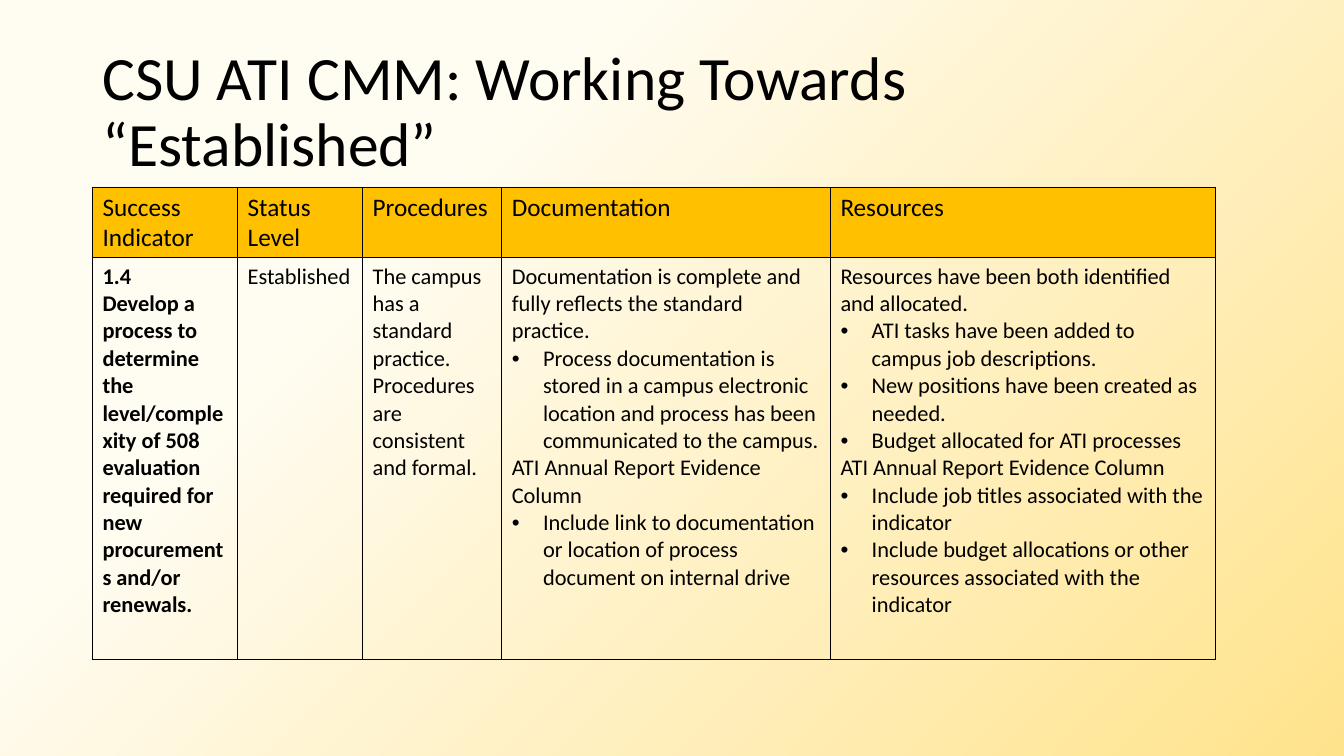
from lxml import etree
from pptx import Presentation, util as u
from pptx.dml.color import RGBColor
from pptx.enum import text
from pptx.oxml import ns

BLACK = RGBColor(0x00, 0x00, 0x00)
AMBER = RGBColor(0xFF, 0xC0, 0x00)
CREAM = RGBColor(0xFF, 0xFC, 0xF2)
GOLD = RGBColor(0xFF, 0xE3, 0x8C)

WIDTH, HEIGHT = u.Inches(13.33), u.Inches(7.5)
LEFT = 6.88
INDENT = u.Inches(0.31)
COLUMNS = [1.44, 1.24, 1.38, 3.26, 3.82]
ROWS = [0.68, 3.99]

HEADERS = ["Success Indicator", "Status Level", "Procedures", "Documentation", "Resources"]
DETAILS = [
    ["1.4",
     "Develop a process to determine the level/complexity of 508 evaluation "
     "required for new procurements and/or renewals."],
    ["Established"],
    ["The campus has a standard practice. Procedures are consistent and formal."],
    ["Documentation is complete and fully reflects the standard practice.",
     "• Process documentation is stored in a campus electronic location and "
     "process has been communicated to the campus.",
     "ATI Annual Report Evidence Column",
     "• Include link to documentation or location of process document on internal drive"],
    ["Resources have been both identified and allocated.",
     "• ATI tasks have been added to campus job descriptions.",
     "• New positions have been created as needed.",
     "• Budget allocated for ATI processes",
     "ATI Annual Report Evidence Column",
     "• Include job titles associated with the indicator",
     "• Include budget allocations or other resources associated with the indicator"],
]


def across(percent):
    return int(WIDTH * percent / 100)


def down(percent):
    return int(HEIGHT * percent / 100)


def add_bullet(p):
    pPr = p._p.get_or_add_pPr()
    pPr.set("marL", str(INDENT))
    pPr.set("indent", str(-INDENT))
    etree.SubElement(pPr, ns.qn("a:buFont"), typeface="Arial")
    etree.SubElement(pPr, ns.qn("a:buChar"), char="•")


def write(tf, lines, size=16, bold=False, spacing=None):
    tf.word_wrap = True
    for i, line in enumerate(lines):
        p = tf.add_paragraph() if i else tf.paragraphs[0]
        if spacing:
            p.line_spacing = spacing
        if line.startswith("• "):
            add_bullet(p)
        r = p.add_run()
        r.text = line.removeprefix("• ")
        r.font.name = "Calibri"
        r.font.size = u.Pt(size)
        r.font.bold = bold
        r.font.color.rgb = BLACK


def add_borders(cell):
    tcPr = cell._tc.get_or_add_tcPr()
    for side in ("lnL", "lnR", "lnT", "lnB"):
        ln = etree.SubElement(tcPr, ns.qn(f"a:{side}"), w=str(u.Pt(1)))
        fill = etree.SubElement(ln, ns.qn("a:solidFill"))
        etree.SubElement(fill, ns.qn("a:srgbClr"), val=str(BLACK))


def set_background(s):
    fill = s.background.fill
    fill.gradient()
    fill.gradient_angle = 315
    for stop, position, color in zip(fill.gradient_stops, (0.29, 1), (CREAM, GOLD)):
        stop.position = position
        stop.color.rgb = color


def add_title(s, title):
    sp = s.shapes.add_textbox(across(LEFT), down(5.35), across(86.25), down(19.33))
    sp.text_frame.vertical_anchor = text.MSO_ANCHOR.MIDDLE
    write(sp.text_frame, [title], size=44, spacing=0.9)


def add_indicator_table(s):
    frame = s.shapes.add_table(len(ROWS), len(COLUMNS), across(LEFT), down(24.75),
                               u.Inches(sum(COLUMNS)), u.Inches(sum(ROWS)))
    table = frame.table
    table.first_row = table.horz_banding = False
    for row, height in zip(table.rows, ROWS):
        row.height = u.Inches(height)
    for c, (width, header, details) in enumerate(zip(COLUMNS, HEADERS, DETAILS)):
        table.columns[c].width = u.Inches(width)
        head, body = table.cell(0, c), table.cell(1, c)
        add_borders(head)
        add_borders(body)
        head.fill.solid()
        head.fill.fore_color.rgb = AMBER
        body.fill.background()
        write(head.text_frame, [header], size=18)
        write(body.text_frame, details, bold=c == 0)


def main():
    prs = Presentation()
    prs.slide_width, prs.slide_height = WIDTH, HEIGHT
    s = prs.slides.add_slide(prs.slide_layouts[6])
    set_background(s)
    add_title(s, "CSU ATI CMM: Working Towards “Established”")
    add_indicator_table(s)
    prs.save("out.pptx")


if __name__ == "__main__":
    main()
